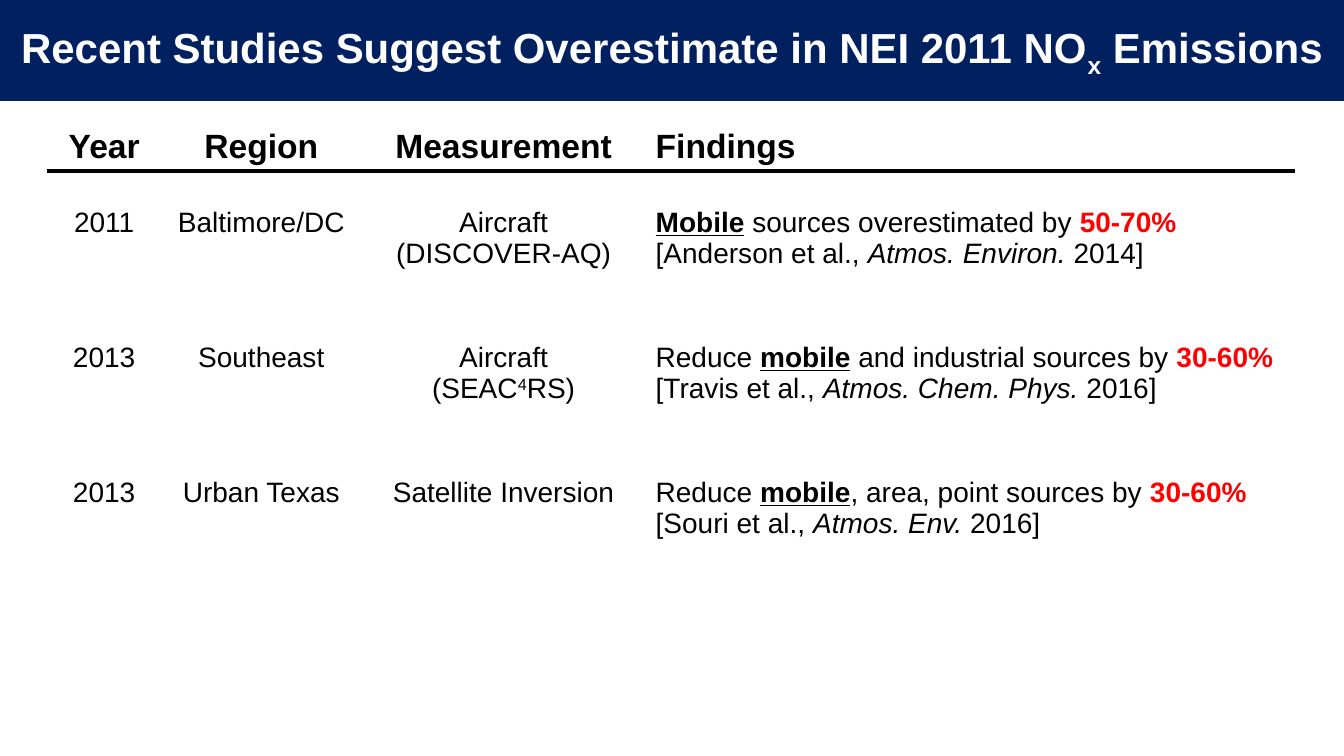
"""Build a slide with a table of recent studies on NOx emission overestimates."""
from lxml import etree
from pptx import Presentation
from pptx.dml.color import RGBColor
from pptx.enum.text import MSO_ANCHOR, MSO_AUTO_SIZE, PP_ALIGN
from pptx.oxml.ns import qn
from pptx.util import Cm, Pt

CENTER, LEFT = PP_ALIGN.CENTER, PP_ALIGN.LEFT
MIDDLE, TOP = MSO_ANCHOR.MIDDLE, MSO_ANCHOR.TOP
NO_AUTOFIT = MSO_AUTO_SIZE.NONE

FONT = "Arial"
NAVY, WHITE, BLACK, RED = "002060", "FFFFFF", "000000", "FF0000"
BASELINES = {"sub": "-25000", "super": "30000"}

TITLE = [("Recent Studies Suggest Overestimate in NEI 2011 NO", "bold"),
         ("x", "bold sub"), (" Emissions", "bold")]
HEADINGS = ["Year", "Region", "Measurement", "Findings"]
STUDIES = [
    ("2011", "Baltimore/DC",
     [[("Aircraft", "")], [("(DISCOVER-AQ)", "")]],
     [[("Mobile", "bold underline"), (" sources overestimated by ", ""), ("50-70%", "bold red")],
      [("[Anderson et al., ", ""), ("Atmos. Environ.", "italic"), (" 2014]", "")]]),
    ("2013", "Southeast",
     [[("Aircraft", "")], [("(SEAC", ""), ("4", "super"), ("RS)", "")]],
     [[("Reduce ", ""), ("mobile", "bold underline"), (" and industrial sources by ", ""),
       ("30-60%", "bold red"), (" [Travis et al., ", ""),
       ("Atmos. Chem. Phys.", "italic"), (" 2016]", "")]]),
    ("2013", "Urban Texas",
     [[("Satellite Inversion", "")]],
     [[("Reduce ", ""), ("mobile", "bold underline"), (", area, point sources by ", ""),
       ("30-60%", "bold red")],
      [("[Souri et al., ", ""), ("Atmos. Env.", "italic"), (" 2016]", "")]]),
]

SLIDE_WIDTH, SLIDE_HEIGHT, BANNER_HEIGHT = Cm(33.87), Cm(19.05), Cm(2.54)
TABLE_LEFT, TABLE_TOP = Cm(1.19), Cm(3.1)
COLUMN_WIDTHS = [Cm(2.87), Cm(5.05), Cm(7.16), Cm(16.36)]
HEADING_HEIGHT, STUDY_HEIGHT = Cm(1.2), Cm(3.4)
HEADING_MARGIN, STUDY_MARGIN = Cm(0.13), Cm(0.92)


def rgb(color):
    return RGBColor.from_string(color)


def write(frame, paragraphs, size, color, align):
    for index, pieces in enumerate(paragraphs):
        paragraph = frame.add_paragraph() if index else frame.paragraphs[0]
        paragraph.alignment = align
        for text, style in pieces:
            run = paragraph.add_run()
            run.text = text
            font = run.font
            font.name, font.size = FONT, Pt(size)
            font.bold = "bold" in style
            font.italic = "italic" in style
            font.underline = "underline" in style
            font.color.rgb = rgb(RED if "red" in style else color)
            for shift, baseline in BASELINES.items():
                if shift in style.split():
                    run._r.get_or_add_rPr().set("baseline", baseline)


def set_borders(cell, ruled_side):
    properties = cell._tc.get_or_add_tcPr()
    for position, side in enumerate(("lnL", "lnR", "lnT", "lnB")):
        ruled = side == ruled_side
        line = etree.Element(qn(f"a:{side}"), w=str(Pt(3 if ruled else 1)))
        fill = etree.SubElement(line, qn("a:solidFill"))
        etree.SubElement(fill, qn("a:srgbClr"), val=BLACK if ruled else WHITE)
        properties.insert(position, line)


def add_banner(slide):
    banner = slide.shapes.title
    banner.left, banner.top = 0, 0
    banner.width, banner.height = SLIDE_WIDTH, BANNER_HEIGHT
    banner.fill.solid()
    banner.fill.fore_color.rgb = rgb(NAVY)
    frame = banner.text_frame
    frame.auto_size = NO_AUTOFIT
    frame.vertical_anchor = MIDDLE
    write(frame, [TITLE], 30, WHITE, CENTER)


def add_studies(slide):
    heading_row = [[[(heading, "bold")]] for heading in HEADINGS]
    study_rows = [[[[(year, "")]], [[(region, "")]], measurement, findings]
                  for year, region, measurement, findings in STUDIES]
    rows = [heading_row] + study_rows
    heights = [HEADING_HEIGHT] + [STUDY_HEIGHT] * len(STUDIES)
    table = slide.shapes.add_table(len(rows), len(HEADINGS), TABLE_LEFT, TABLE_TOP,
                                   sum(COLUMN_WIDTHS), sum(heights)).table
    table.first_row = table.horz_banding = False
    for column, width in zip(table.columns, COLUMN_WIDTHS):
        column.width = width
    ruled_sides = {0: "lnB", 1: "lnT"}
    for r, row in enumerate(rows):
        table.rows[r].height = heights[r]
        for c, paragraphs in enumerate(row):
            cell = table.cell(r, c)
            cell.fill.background()
            cell.vertical_anchor = TOP
            cell.margin_top = STUDY_MARGIN if r else HEADING_MARGIN
            set_borders(cell, ruled_sides.get(r))
            align = LEFT if HEADINGS[c] == "Findings" else CENTER
            write(cell.text_frame, paragraphs, 20 if r else 24, BLACK, align)


def main():
    deck = Presentation()
    deck.slide_width, deck.slide_height = SLIDE_WIDTH, SLIDE_HEIGHT
    slide = deck.slides.add_slide(deck.slide_layouts[5])
    add_banner(slide)
    add_studies(slide)
    deck.save("out.pptx")


if __name__ == "__main__":
    main()
